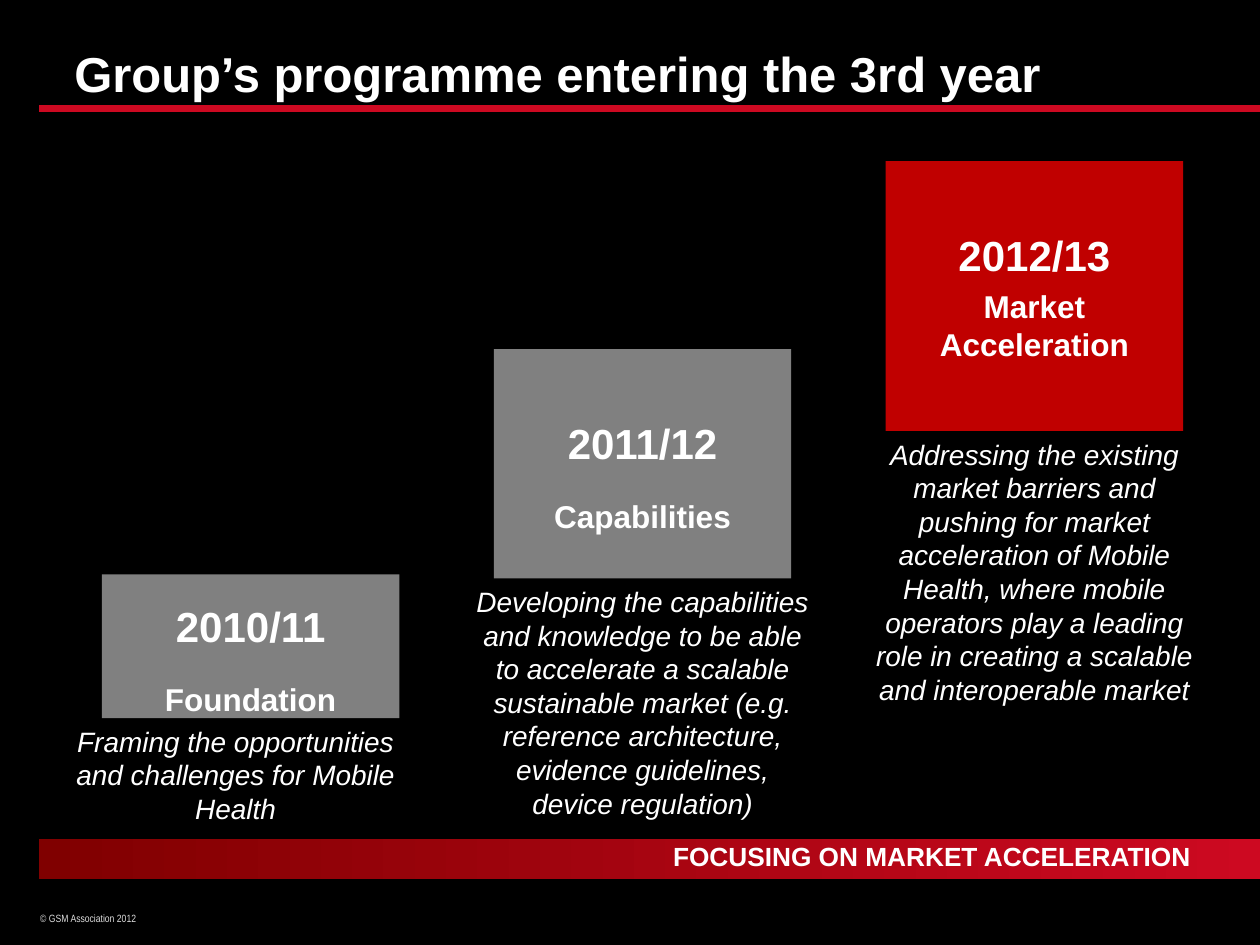
from dataclasses import dataclass

from lxml import etree
from pptx import Presentation, util as u
from pptx.dml.color import RGBColor
from pptx.enum import shapes, text
from pptx.oxml.ns import qn

WIDTH, HEIGHT = 10, 7.5
MARGIN = 0.31
STEP_LEFT, STEP_PITCH, STEP_WIDTH = 0.81, 3.11, 2.36
CAPTION_WIDTH = 2.9
BLACK, WHITE, GREY, PALE = "000000", "FFFFFF", "808080", "DDDDDD"
RED, BRIGHT_RED, DARK_RED = "C00000", "CD0921", "800000"
LEFT, CENTER, RIGHT = text.PP_ALIGN.LEFT, text.PP_ALIGN.CENTER, text.PP_ALIGN.RIGHT


@dataclass(frozen=True)
class Step:
    year: str
    stage: str
    caption: str
    top: float
    height: float
    fill: str = GREY
    line_spacing: float = 1.5
    caption_shift: float = -0.27


STEPS = [
    Step("2010/11", "Foundation",
         "Framing the opportunities and challenges for Mobile Health",
         4.56, 1.14, caption_shift=-0.39),
    Step("2011/12", "Capabilities",
         "Developing the capabilities and knowledge to be able to accelerate "
         "a scalable sustainable market (e.g. reference architecture, "
         "evidence guidelines, device regulation)",
         2.77, 1.82),
    Step("2012/13", "Market Acceleration",
         "Addressing the existing market barriers and pushing for market "
         "acceleration of Mobile Health, where mobile operators play a leading "
         "role in creating a scalable and interoperable market",
         1.28, 2.14, fill=RED, line_spacing=1.0),
]


def rgb(value: str) -> RGBColor:
    return RGBColor.from_string(value)


def box(left: float, top: float, width: float, height: float) -> list[int]:
    return [u.Inches(length) for length in (left, top, width, height)]


def set_insets(frame, sides: float, ends: float) -> None:
    frame.margin_left = frame.margin_right = u.Inches(sides)
    frame.margin_top = frame.margin_bottom = u.Inches(ends)


def add_run(paragraph, words: str, size: float, color: str = WHITE,
            font: str = "Arial", bold: bool = False, italic: bool = False) -> None:
    run = paragraph.add_run()
    run.text = words
    run.font.name, run.font.size = font, u.Pt(size)
    run.font.bold, run.font.italic = bold, italic
    run.font.color.rgb = rgb(color)


def add_label(slide, area: list[int], words: str, size: float,
              align=LEFT, sides: float = 0.1, **style):
    frame = slide.shapes.add_textbox(*area).text_frame
    frame.word_wrap = True
    set_insets(frame, sides, 0.05)
    paragraph = frame.paragraphs[0]
    paragraph.alignment = align
    add_run(paragraph, words, size, **style)
    return frame


def add_title_rule(slide) -> None:
    y = u.Inches(0.86)
    rule = slide.shapes.add_connector(
        shapes.MSO_CONNECTOR.STRAIGHT, u.Inches(MARGIN), y, u.Inches(WIDTH), y)
    rule.line.color.rgb = rgb(BRIGHT_RED)
    rule.line.width = u.Pt(3.75)
    etree.SubElement(rule._element.spPr, qn("a:effectLst"))


def add_focus_bar(slide) -> None:
    bar = slide.shapes.add_shape(
        shapes.MSO_SHAPE.RECTANGLE, *box(MARGIN, 6.66, WIDTH - MARGIN, 0.32))
    bar.shadow.inherit = False
    bar.line.fill.background()
    bar.fill.gradient()
    bar.fill.gradient_angle = 0
    for stop, color in zip(bar.fill.gradient_stops, (DARK_RED, BRIGHT_RED)):
        stop.color.rgb = rgb(color)


def add_step(slide, column: int, step: Step) -> None:
    left = STEP_LEFT + column * STEP_PITCH
    block = slide.shapes.add_shape(
        shapes.MSO_SHAPE.PENTAGON, *box(left, step.top, STEP_WIDTH, step.height))
    block.adjustments[0] = 0
    block.shadow.inherit = False
    block.fill.solid()
    block.fill.fore_color.rgb = rgb(step.fill)
    block.line.fill.background()

    frame = block.text_frame
    frame.word_wrap = True
    frame.vertical_anchor = text.MSO_ANCHOR.MIDDLE
    set_insets(frame, 0.08, 0.08)
    year, stage = frame.paragraphs[0], frame.add_paragraph()
    for paragraph, words, size in ((year, step.year, 24), (stage, step.stage, 18)):
        paragraph.alignment = CENTER
        paragraph.line_spacing = step.line_spacing
        add_run(paragraph, words, size, bold=True)
    stage.space_before = u.Pt(4 * step.line_spacing)


def add_caption(slide, column: int, step: Step) -> None:
    left = STEP_LEFT + column * STEP_PITCH + step.caption_shift
    bottom = step.top + step.height
    add_label(slide, box(left, bottom, CAPTION_WIDTH, 6.6 - bottom),
              step.caption, 16, CENTER, italic=True)


def main() -> None:
    deck = Presentation()
    deck.slide_width, deck.slide_height = u.Inches(WIDTH), u.Inches(HEIGHT)
    slide = deck.slides.add_slide(deck.slide_layouts[6])
    slide.background.fill.solid()
    slide.background.fill.fore_color.rgb = rgb(BLACK)

    copyright_frame = add_label(slide, box(MARGIN, 7.19, 1.56, 0.2),
                                "© GSM Association 2012", 6,
                                color=PALE, font="Arial Narrow")
    copyright_frame.margin_left = u.Inches(0.01)
    add_title_rule(slide)
    add_focus_bar(slide)
    add_label(slide, box(0.5, 0.3, 9, 0.76),
              "Group’s programme entering the 3rd year", 28, sides=0.09, bold=True)
    add_label(slide, box(4.77, 6.62, 4.77, 0.61),
              "FOCUSING ON MARKET ACCELERATION", 15, RIGHT, sides=0.09, bold=True)
    for draw in (add_step, add_caption):
        for column, step in enumerate(STEPS):
            draw(slide, column, step)
    deck.save("out.pptx")


if __name__ == "__main__":
    main()
